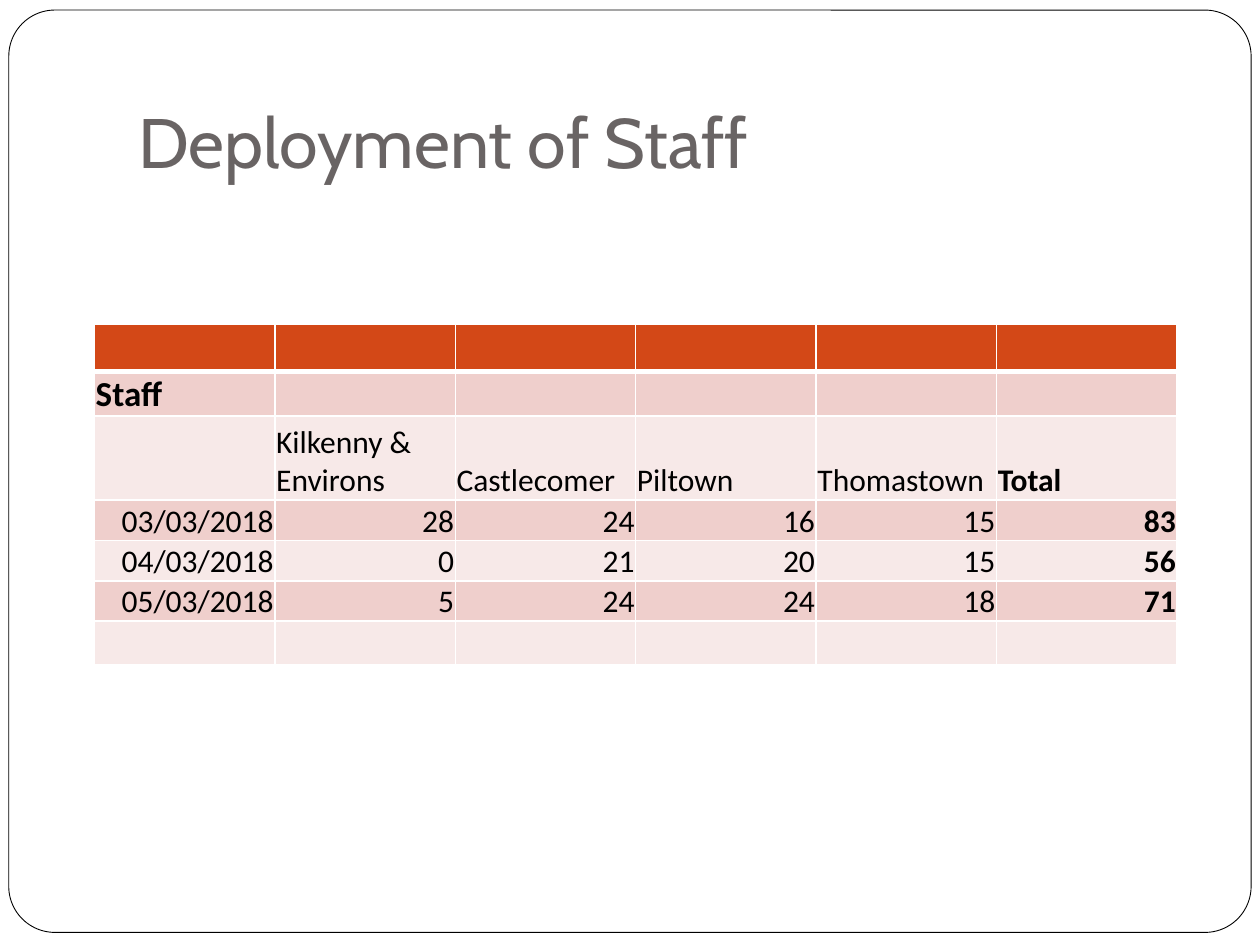
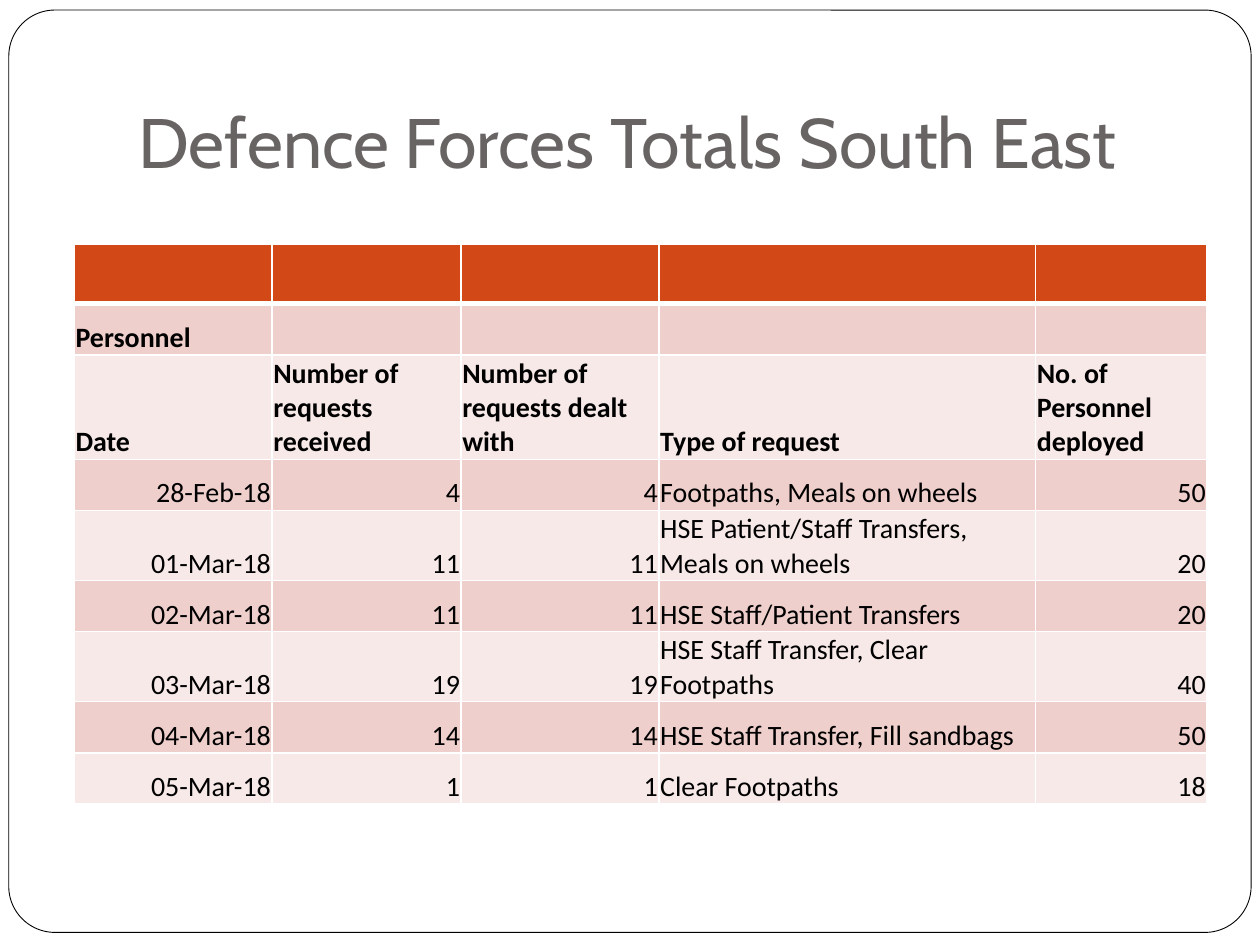
from lxml import etree
from pptx import Presentation
from pptx import util as u
from pptx.dml.color import RGBColor
from pptx.enum import shapes, text
from pptx.oxml import ns

WHITE = RGBColor(0xFF, 0xFF, 0xFF)
BLACK = RGBColor(0x00, 0x00, 0x00)
TITLE_GREY = RGBColor(0x69, 0x64, 0x64)
HEADER_ORANGE = RGBColor(0xD3, 0x48, 0x17)
BANDS = (RGBColor(0xEF, 0xCF, 0xCC), RGBColor(0xF7, 0xE9, 0xE8))

GRID_COLUMNS, GRID_ROWS = 100, 75
TITLE_ONLY = 5


class Deck:
    """Holds the shared style and the current slide; lengths are grid units."""

    title_font, body_font = "Cabin", "Calibri"

    def __init__(self):
        self.presentation = Presentation()
        self.presentation.slide_width = u.Inches(10)
        self.presentation.slide_height = u.Inches(7.5)
        self.slide = None

    def across(self, columns):
        return round(self.presentation.slide_width * columns / GRID_COLUMNS)

    def down(self, rows):
        return round(self.presentation.slide_height * rows / GRID_ROWS)

    def box(self, left, top, width, height):
        return self.across(left), self.down(top), self.across(width), self.down(height)

    def set_font(self, paragraph, name, size, color, bold=False):
        font = paragraph.font
        font.name, font.size, font.bold = name, u.Pt(size), bold
        font.color.rgb = color

    def add_slide(self, title):
        layout = self.presentation.slide_layouts[TITLE_ONLY]
        self.slide = self.presentation.slides.add_slide(layout)
        self.add_frame()
        self.set_title(title)

    def add_frame(self):
        frame = self.slide.shapes.add_shape(
            shapes.MSO_SHAPE.ROUNDED_RECTANGLE, *self.box(0.7, 0.8, 98.6, 73.2))
        frame.adjustments[0] = 0.05
        frame.shadow.inherit = False
        frame.fill.solid()
        frame.fill.fore_color.rgb = WHITE
        frame.line.color.rgb = BLACK
        frame.line.width = u.Pt(0.5)
        # The frame lies behind the title
        self.slide.shapes.title._element.addprevious(frame._element)

    def set_title(self, title):
        shape = self.slide.shapes.title
        shape.left, shape.top, shape.width, shape.height = self.box(10, 3, 85, 12.5)
        frame = shape.text_frame
        frame.text = title
        frame.auto_size = text.MSO_AUTO_SIZE.NONE
        frame.vertical_anchor = text.MSO_ANCHOR.BOTTOM
        frame.margin_bottom = u.Inches(0.1)
        paragraph = frame.paragraphs[0]
        paragraph.alignment = text.PP_ALIGN.LEFT
        self.set_font(paragraph, self.title_font, 40, TITLE_GREY)

    def add_table(self, left, top, widths, heights, rows, size, is_bold, caption_size=None):
        """Draw an empty orange header, a caption row and then the rows."""
        column_count = len(widths)
        shape = self.slide.shapes.add_table(
            len(heights), column_count, *self.box(left, top, sum(widths), sum(heights)))
        table = shape.table
        table.horz_banding = False
        for column, width in zip(table.columns, widths):
            column.width = self.across(width)
        for row, height in zip(table.rows, heights):
            row.height = self.down(height)
        for row_index in range(len(heights)):
            values = rows.get(row_index, ())
            row_size = caption_size if caption_size and row_index == 1 else size
            for column_index in range(column_count):
                value = values[column_index] if column_index < len(values) else ""
                cell = table.cell(row_index, column_index)
                self.set_borders(cell, row_index)
                cell.fill.solid()
                cell.fill.fore_color.rgb = (
                    BANDS[(row_index - 1) % 2] if row_index else HEADER_ORANGE)
                self.set_cell_text(cell, value, row_size, is_bold(row_index, column_index))

    def set_cell_text(self, cell, value, size, bold):
        cell.margin_left = cell.margin_right = cell.margin_top = u.Inches(0.01)
        cell.margin_bottom = 0
        cell.vertical_anchor = text.MSO_ANCHOR.BOTTOM
        cell.text = value
        paragraph = cell.text_frame.paragraphs[0]
        # Numbers and dates stand at the right, words at the left
        paragraph.alignment = (
            text.PP_ALIGN.RIGHT if value[:1].isdigit() else text.PP_ALIGN.LEFT)
        self.set_font(paragraph, self.body_font, size, BLACK, bold)

    def set_borders(self, cell, row_index):
        """White rules, thick between the header and the caption row."""
        thick_side = {0: "lnB", 1: "lnT"}.get(row_index)
        properties = cell._tc.get_or_add_tcPr()
        for side in ("lnL", "lnR", "lnT", "lnB"):
            width = u.Pt(3 if side == thick_side else 1)
            line = etree.SubElement(properties, ns.qn(f"a:{side}"), w=str(width))
            fill = etree.SubElement(line, ns.qn("a:solidFill"))
            etree.SubElement(fill, ns.qn("a:srgbClr"), val=str(WHITE))


def add_staff_slide(deck):
    deck.add_slide("Deployment of Staff")
    staff_by_day = {
        1: ("Staff",),
        2: ("", "Kilkenny & Environs", "Castlecomer", "Piltown", "Thomastown", "Total"),
        3: ("03/03/2018", "28", "24", "16", "15", "83"),
        4: ("04/03/2018", "0", "21", "20", "15", "56"),
        5: ("05/03/2018", "5", "24", "24", "18", "71"),
    }
    deck.add_table(
        7.5, 25.7, [14.32] * 6, [3.8, 3.5, 6.7, 3.2, 3.2, 3.2, 3.5], staff_by_day,
        size=18, caption_size=20,
        is_bold=lambda row, column: row == 1 or column == 5)


def add_defence_slide(deck):
    deck.add_slide("Defence Forces Totals South East")
    requests_by_day = {
        1: ("Personnel",),
        2: ("Date", "Number of requests received", "Number of requests dealt with",
            "Type of request", "No. of Personnel deployed"),
        3: ("28-Feb-18", "4", "4", "Footpaths, Meals on wheels", "50"),
        4: ("01-Mar-18", "11", "11", "HSE Patient/Staff Transfers, Meals on wheels", "20"),
        5: ("02-Mar-18", "11", "11", "HSE Staff/Patient Transfers", "20"),
        6: ("03-Mar-18", "19", "19", "HSE Staff Transfer, Clear Footpaths", "40"),
        7: ("04-Mar-18", "14", "14", "HSE Staff Transfer, Fill sandbags", "50"),
        8: ("05-Mar-18", "1", "1", "Clear Footpaths", "18"),
    }
    one_line, two_lines = 4.06, 5.56
    deck.add_table(
        5.9, 19.4, [15.7, 15, 15.7, 29.9, 13.6],
        [4.7, one_line, 8.3, one_line, two_lines, one_line, two_lines, one_line, one_line],
        requests_by_day, size=16, is_bold=lambda row, column: row <= 2)


def main():
    deck = Deck()
    add_staff_slide(deck)
    add_defence_slide(deck)
    deck.presentation.save("out.pptx")


if __name__ == "__main__":
    main()
